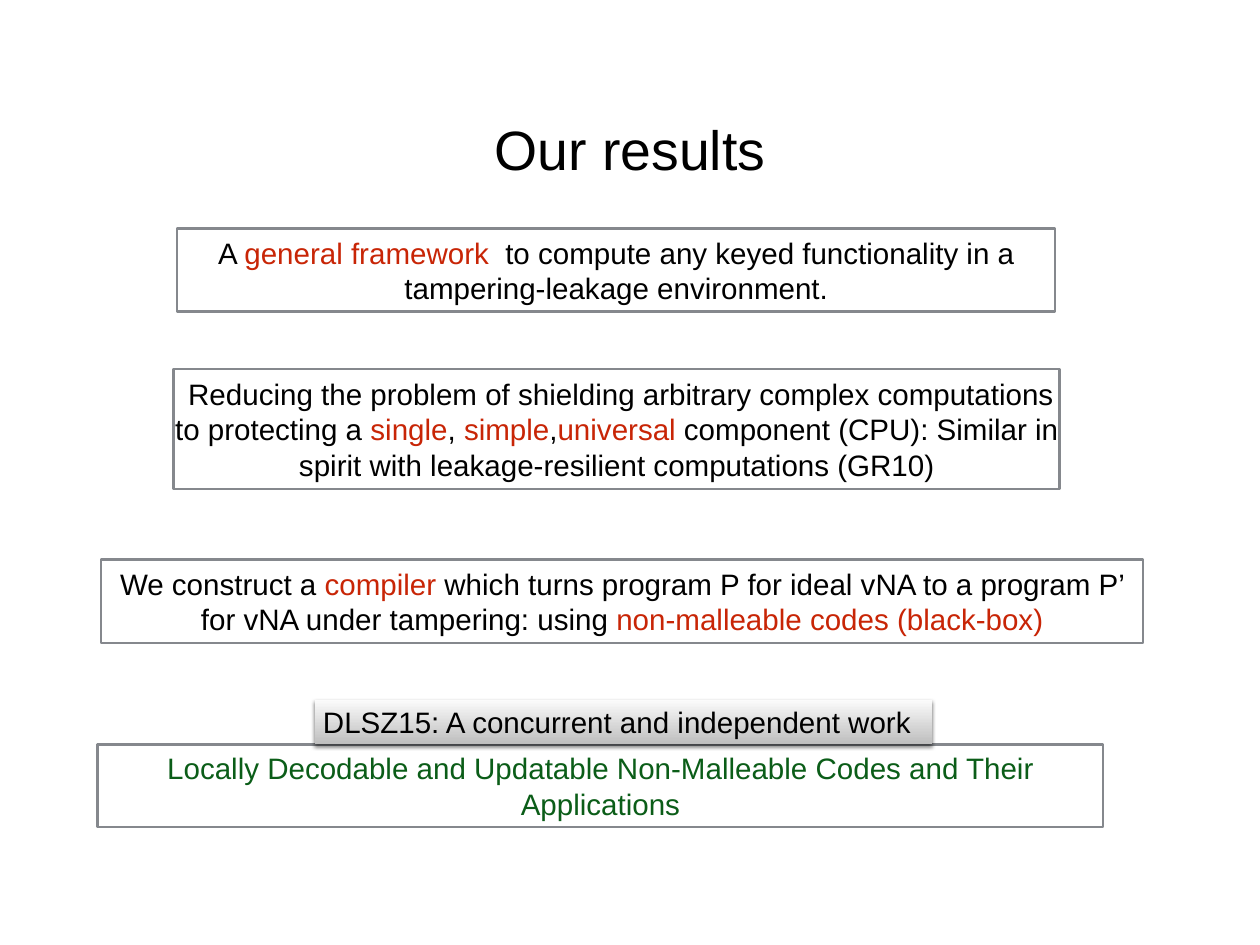
from dataclasses import dataclass

from lxml import etree
from pptx import Presentation
from pptx.dml.color import RGBColor
from pptx.enum.shapes import MSO_SHAPE
from pptx.enum.text import MSO_ANCHOR, PP_ALIGN
from pptx.oxml.ns import qn
from pptx.util import Inches, Pt

RECT = MSO_SHAPE.RECTANGLE
MIDDLE = MSO_ANCHOR.MIDDLE
CENTER = PP_ALIGN.CENTER
TITLE_ONLY = 5
TOP_TO_BOTTOM = 270


@dataclass(frozen=True)
class Theme:
    font: str = "Arial"
    title_size: float = 45
    body_size: float = 24
    text: str = "000000"
    accent: str = "C82506"
    paper: str = "0B5D18"
    frame: str = "85888D"
    frame_width: float = 2
    label_fill: tuple = ("FBFBFB", "BEBEBE")


THEME = Theme()

# Boxes are left, top, width, height in percent of the slide.
TITLE_BOX = (7.31, 4.59, 85.37, 22.12)
RELATED_BOX = (7.74, 74.04, 79.82, 13.5)
# Asterisks enclose the accented words.
RESULTS = [
    ((14.06, 24.18, 69.69, 8.81),
     "A *general framework*  to compute any keyed functionality in a "
     "tampering-leakage environment."),
    ((13.78, 39.08, 70.32, 12.65),
     " Reducing the problem of shielding arbitrary complex computations to "
     "protecting a *single*, *simple*,*universal* component (CPU): Similar in "
     "spirit with leakage-resilient computations (GR10)"),
    ((8.02, 59.23, 82.7, 8.81),
     "We construct a *compiler* which turns program P for ideal vNA to a program "
     "P’ for vNA under tampering: using *non-malleable codes (black-box)*"),
]


def share(box, left, top, width, height):
    """Return the part of a box given by percentages of its size."""
    x, y, w, h = box
    return (int(x + w * left / 100), int(y + h * top / 100),
            int(w * width / 100), int(h * height / 100))


def write(sp, text, size, color, margin_right=0):
    tf = sp.text_frame
    layout = dict(word_wrap=True, vertical_anchor=MIDDLE, margin_left=0,
                  margin_top=0, margin_right=margin_right, margin_bottom=0)
    for name, value in layout.items():
        setattr(tf, name, value)
    p = tf.paragraphs[0]
    p.alignment = CENTER
    for i, part in enumerate(text.split("*")):
        if part:
            r = p.add_run()
            r.text = part
            for name, value in dict(name=THEME.font, size=Pt(size), bold=False).items():
                setattr(r.font, name, value)
            r.font.color.rgb = RGBColor.from_string(THEME.accent if i % 2 else color)


def add_title(s, box, text):
    sp = s.shapes.title
    for name, value in zip(("left", "top", "width", "height"), box):
        setattr(sp, name, value)
    write(sp, text, THEME.title_size, THEME.text)


def add_framed_text(s, box, text, color=THEME.text):
    sp = s.shapes.add_shape(RECT, *box)
    sp.shadow.inherit = False
    sp.fill.background()
    sp.line.color.rgb = RGBColor.from_string(THEME.frame)
    sp.line.width = Pt(THEME.frame_width)
    write(sp, text, THEME.body_size, color)


def add_drop_shadow(sp):
    sp.shadow.inherit = False
    effects = sp._element.spPr.find(qn("a:effectLst"))
    shadow = etree.SubElement(effects, qn("a:outerShdw"), blurRad=str(Pt(3)),
                              dist=str(Pt(2)), dir="5400000", rotWithShape="0")
    color = etree.SubElement(shadow, qn("a:srgbClr"), val="000000")
    etree.SubElement(color, qn("a:alpha"), val="50000")


def add_label(s, box, text):
    sp = s.shapes.add_shape(RECT, *box)
    sp.line.fill.background()
    sp.fill.gradient()
    sp.fill.gradient_angle = TOP_TO_BOTTOM
    for position, (stop, color) in enumerate(zip(sp.fill.gradient_stops, THEME.label_fill)):
        stop.position = position
        stop.color.rgb = RGBColor.from_string(color)
    add_drop_shadow(sp)
    write(sp, text, THEME.body_size, THEME.text, margin_right=Inches(0.15))


def add_related_work(s, box, label, paper):
    """Place a framed paper title with its label on the top edge."""
    add_framed_text(s, share(box, 0, 35, 100, 65), paper, THEME.paper)
    add_label(s, share(box, 21.59, 0, 61.41, 35), label)


def main():
    prs = Presentation()
    prs.slide_width, prs.slide_height = Inches(14.22), Inches(10.67)
    page = (0, 0, prs.slide_width, prs.slide_height)
    s = prs.slides.add_slide(prs.slide_layouts[TITLE_ONLY])
    add_title(s, share(page, *TITLE_BOX), "Our results")
    for box, text in RESULTS:
        add_framed_text(s, share(page, *box), text)
    add_related_work(
        s, share(page, *RELATED_BOX),
        "DLSZ15: A concurrent and independent work",
        "Locally Decodable and Updatable Non-Malleable Codes and Their Applications")
    prs.save("out.pptx")


if __name__ == "__main__":
    main()
